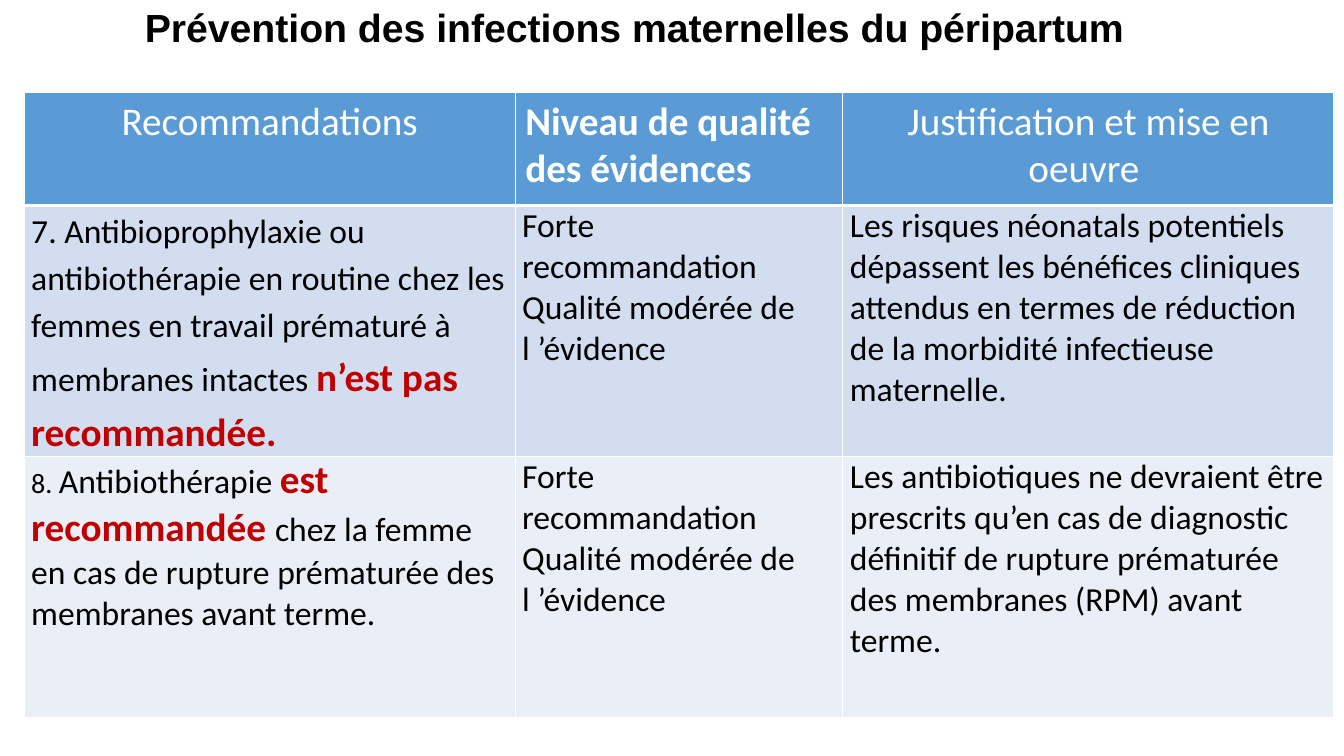
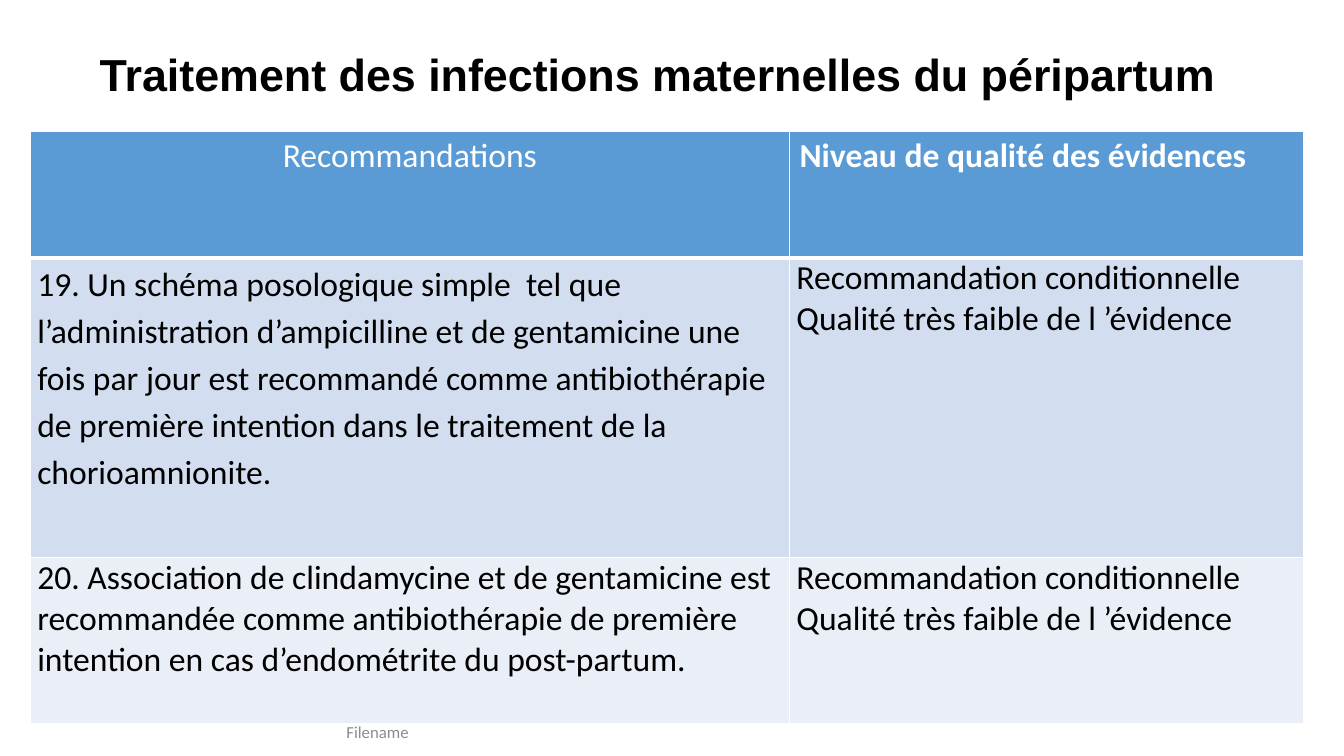
from lxml.etree import SubElement
from pptx import Presentation
from pptx.dml.color import RGBColor
from pptx.enum.text import MSO_ANCHOR as ANCHOR, PP_ALIGN as ALIGN
from pptx.oxml.ns import qn
from pptx.util import Pt

PX = 9144  # EMU per px, 100 px to the inch
THEME = {
    "title_font": "Arial", "text_font": "Calibri",
    "header_fill": "5B9BD5", "bands": ("D2DEEF", "EAEFF7"),
    "white": "FFFFFF", "black": "000000", "red": "C00000", "grey": "8C8C8C",
    "small": 20, "body": 24, "strong": 28, "footer": 12,
    "rule": 1, "header_rule": 3,
}
LOOSE = {"line_spacing": 1.15, "space_before": Pt(6), "space_after": Pt(6)}

# Content: a cell is a list of paragraphs, a paragraph a list of (text, style)
LEVEL = "Niveau de qualité des évidences"
MODERATE = [[("Forte recommandation", "body")],
            [("Qualité modérée de l\u00a0’évidence", "body")]]
VERY_LOW = [[("Recommandation conditionnelle", "body")],
            [("Qualité très faible de l\u00a0’évidence", "body")]]

SLIDES = [
    {
        "title": "Prévention des infections maternelles du péripartum ",
        "title_box": (45, 0, 1179, 60), "title_size": 28,
        "table_at": (24, 92), "cols": (487, 325, 487), "rows": (112, 249, 259),
        "header_size": 28,
        "header": ["Recommandations", LEVEL, "Justification et mise en oeuvre "],
        "body": [
            [[[("7. Antibioprophylaxie ou antibiothérapie en routine chez les "
                "femmes en travail prématuré à membranes intactes ", "body"),
               ("n’est pas recommandée.", "strong")]],
             MODERATE,
             [[("Les risques néonatals potentiels dépassent les bénéfices "
                "cliniques attendus en termes de réduction de la morbidité "
                "infectieuse maternelle.", "body")]]],
            [[[("8. ", "small"), ("Antibiothérapie ", "body"),
               ("est recommandée ", "strong"),
               ("chez la femme en cas de rupture prématurée des membranes "
                "avant terme.", "body")]],
             MODERATE,
             [[("Les antibiotiques ne devraient être prescrits qu’en cas de "
                "diagnostic définitif de rupture prématurée des membranes "
                "(RPM) avant terme.", "body")]]],
        ],
    },
    {
        "title": "Traitement des infections maternelles du péripartum ",
        "title_box": (84, 23, 1150, 107), "title_size": 32,
        "table_at": (30, 130), "cols": (753, 510), "rows": (126, 297, 165),
        "header_size": 24,
        "header": ["Recommandations", LEVEL],
        "body": [
            [[[("19. Un schéma posologique simple  tel que l’administration "
                "d’ampicilline et de gentamicine une fois par jour est "
                "recommandé comme antibiothérapie de première intention dans "
                "le traitement de la chorioamnionite.", "body")]],
             VERY_LOW],
            [[[("20. Association de clindamycine et de gentamicine est "
                "recommandée comme antibiothérapie de première intention en "
                "cas d’endométrite du post-partum.", "body")]],
             VERY_LOW],
        ],
        "footer": "Filename", "footer_box": (216, 718, 317, 16),
    },
]


def px(*lengths):
    return [n * PX for n in lengths]


def add_run(p, text, size, color, bold=False, font=THEME["text_font"]):
    r = p.add_run()
    r.text = text
    for name, value in {"size": Pt(size), "bold": bold, "name": font}.items():
        setattr(r.font, name, value)
    r.font.color.rgb = RGBColor.from_string(color)


def add_text(s, box, text, size, color, line_spacing=1.0, margin=0, **run):
    tf = s.shapes.add_textbox(*px(*box)).text_frame
    formats = {"word_wrap": True, "vertical_anchor": ANCHOR.MIDDLE,
               "margin_top": margin, "margin_bottom": margin,
               "margin_left": margin * 2, "margin_right": margin * 2}
    for name, value in formats.items():
        setattr(tf, name, value)
    p = tf.paragraphs[0]
    p.alignment, p.line_spacing = ALIGN.CENTER, line_spacing
    add_run(p, text, size, color, **run)


def style_cell(cell, fill, bottom):
    # Borders come before the fill in the cell properties
    tc_pr = cell._tc.get_or_add_tcPr()
    rule = THEME["rule"]
    for side, width in zip("LRTB", (rule, rule, rule, bottom)):
        ln = SubElement(tc_pr, qn(f"a:ln{side}"), w=str(Pt(width)))
        SubElement(SubElement(ln, qn("a:solidFill")), qn("a:srgbClr"),
                   val=THEME["white"])
    cell.fill.solid()
    cell.fill.fore_color.rgb = RGBColor.from_string(fill)


def fill_header(cell, text, size):
    style_cell(cell, THEME["header_fill"], THEME["header_rule"])
    p = cell.text_frame.paragraphs[0]
    is_level = text == LEVEL
    p.alignment = ALIGN.LEFT if is_level else ALIGN.CENTER
    add_run(p, text, size, THEME["white"], bold=is_level)


def fill_body(cell, paragraphs, fill, spacing):
    style_cell(cell, fill, THEME["rule"])
    margins = {"left": 7, "right": 7, "top": 0, "bottom": 0}
    for side, length in margins.items():
        setattr(cell, f"margin_{side}", length * PX)
    tf = cell.text_frame
    for i, runs in enumerate(paragraphs):
        p = tf.add_paragraph() if i else tf.paragraphs[0]
        for name, value in spacing.items():
            setattr(p, name, value)
        for text, style in runs:
            strong = style == "strong"
            add_run(p, text, THEME[style],
                    THEME["red" if strong else "black"], bold=strong)


def add_grid(s, data):
    cols, rows = data["cols"], data["rows"]
    box = px(*data["table_at"], sum(cols), sum(rows))
    table = s.shapes.add_table(len(rows), len(cols), *box).table
    for col, width in zip(table.columns, px(*cols)):
        col.width = width
    for row, height in zip(table.rows, px(*rows)):
        row.height = height
    for c, text in enumerate(data["header"]):
        fill_header(table.cell(0, c), text, data["header_size"])
    for r, cells in enumerate(data["body"]):
        for c, paragraphs in enumerate(cells):
            # The first recommendation is set with looser lines
            spacing = LOOSE if r == c == 0 else {}
            fill_body(table.cell(r + 1, c), paragraphs,
                      THEME["bands"][r % 2], spacing)


def main():
    prs = Presentation()
    prs.slide_width, prs.slide_height = px(1333, 750)
    for data in SLIDES:
        s = prs.slides.add_slide(prs.slide_layouts[6])
        add_text(s, data["title_box"], data["title"], data["title_size"],
                 THEME["black"], line_spacing=0.9, margin=5 * PX,
                 bold=True, font=THEME["title_font"])
        add_grid(s, data)
        if "footer" in data:
            add_text(s, data["footer_box"], data["footer"],
                     THEME["footer"], THEME["grey"])
    prs.save("out.pptx")


if __name__ == "__main__":
    main()
